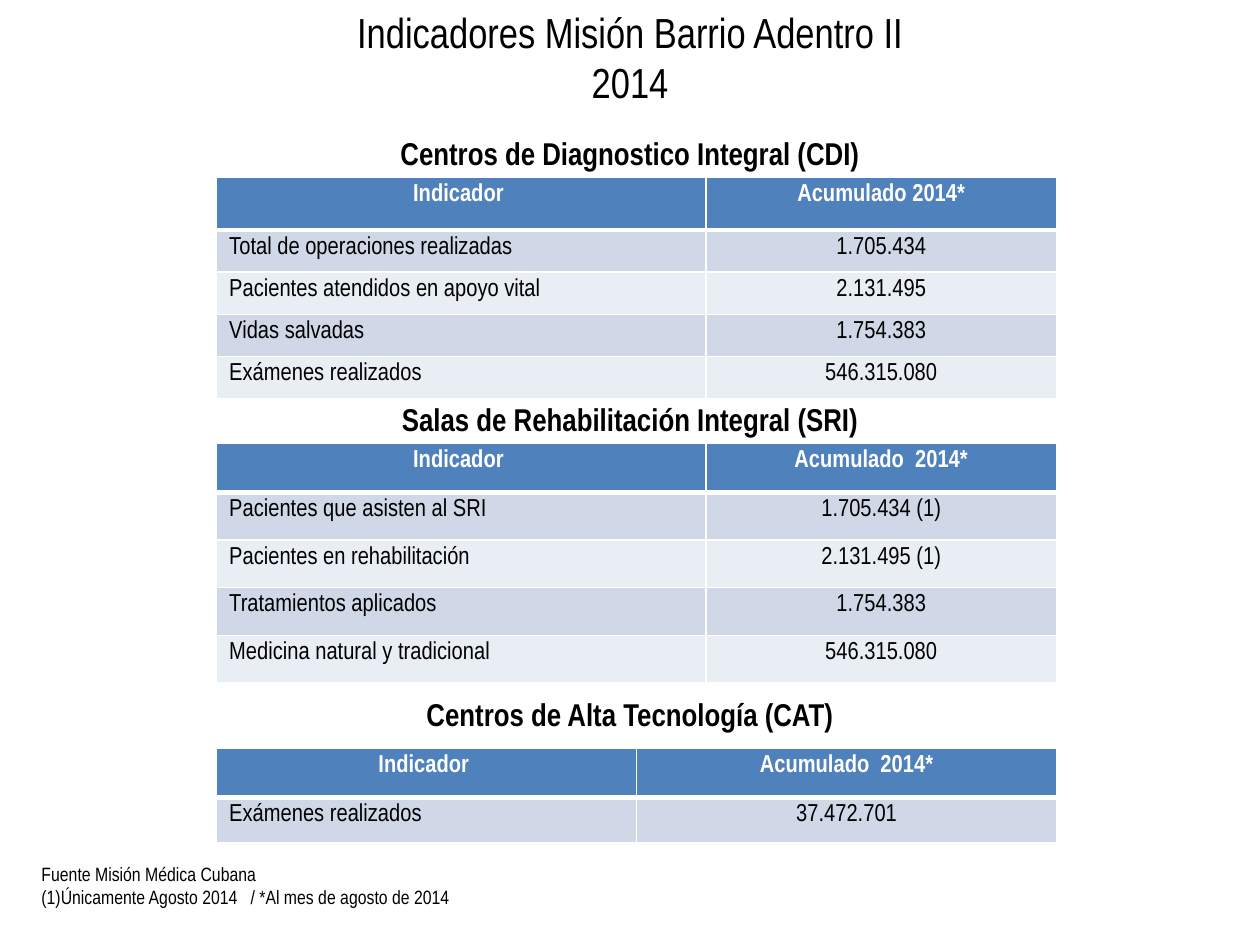
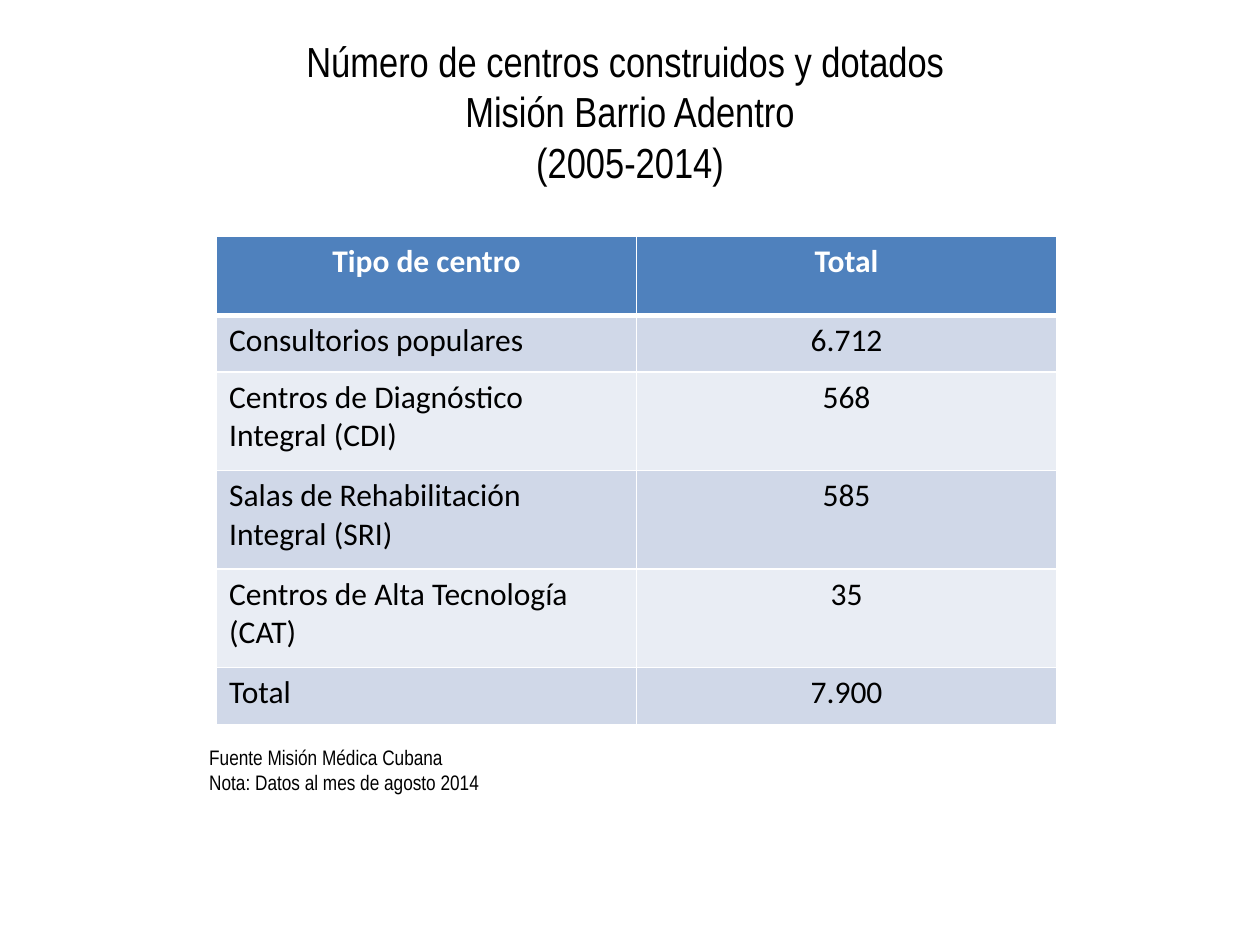
from lxml import etree
from pptx import Presentation
from pptx.dml.color import RGBColor
from pptx.enum.text import MSO_ANCHOR, MSO_AUTO_SIZE, PP_ALIGN
from pptx.oxml.ns import qn
from pptx.util import Pt

LEFT, CENTER = PP_ALIGN.LEFT, PP_ALIGN.CENTER
TOP = MSO_ANCHOR.TOP
GROW = MSO_AUTO_SIZE.SHAPE_TO_FIT_TEXT

COLORS = {
    "text": "000000",
    "head": "4F81BD",
    "headtext": "FFFFFF",
    "odd": "D0D8E8",
    "even": "E9EDF4",
    "line": "FFFFFF",
}
NARROW, ROUND = "Arial Narrow", "Calibri"
TITLE_ONLY = 5
GRID_LEFT = 123.8
WIDE, EQUAL = (279.6, 200.4), (240, 240)
HANG = 18
THIN, THICK = 1, 3


def rgb(name):
    return RGBColor.from_string(COLORS[name])


def style(par, size, align=LEFT, bold=False, color="text", face=NARROW):
    par.alignment = align
    font = par.font
    font.name, font.size, font.bold = face, Pt(size), bold
    font.color.rgb = rgb(color)


def place(shape, left, top, width, height):
    shape.left, shape.top = Pt(left), Pt(top)
    shape.width, shape.height = Pt(width), Pt(height)


def write(frame, lines, size, **look):
    """Fill a text frame with one styled paragraph per line."""
    frame.word_wrap = True
    frame.vertical_anchor = TOP
    frame.auto_size = GROW
    frame.text = "\n".join(lines)
    for par in frame.paragraphs:
        style(par, size, **look)


def add_title(slide, top, height, lines):
    title = slide.shapes.title
    place(title, 107, top, 506, height)
    write(title.text_frame, lines, 24, align=CENTER)


def add_text(slide, box, lines, size, **look):
    shape = slide.shapes.add_textbox(*map(Pt, box))
    write(shape.text_frame, lines, size, **look)
    return shape


def add_heading(slide, top, text):
    add_text(slide, (163.3, top, 393.5, 29), [text], 18, align=CENTER, bold=True)


def add_note(slide, box, lines, size):
    """Add source lines with a hanging indent."""
    note = add_text(slide, box, lines, size)
    for par in note.text_frame.paragraphs:
        props = par._p.get_or_add_pPr()
        props.set("marL", str(Pt(HANG)))
        props.set("indent", str(Pt(-HANG)))


def add_lines(cell, top, base):
    """Draw the cell's borders; top and base are the level line widths."""
    props = cell._tc.get_or_add_tcPr()
    sides = {"lnL": THIN, "lnR": THIN, "lnT": top, "lnB": base}
    for pos, (side, width) in enumerate(sides.items()):
        line = etree.Element(qn(f"a:{side}"), w=str(Pt(width)))
        fill = etree.SubElement(line, qn("a:solidFill"))
        etree.SubElement(fill, qn("a:srgbClr"), val=COLORS["line"])
        props.insert(pos, line)


def add_grid(slide, top, widths, heights, rows, size=14, face=NARROW):
    """Add a two-column table: a header row, then banded label and value rows."""
    frame = slide.shapes.add_table(
        len(rows), len(widths), Pt(GRID_LEFT), Pt(top), Pt(sum(widths)), Pt(sum(heights))
    )
    table = frame.table
    for col, width in zip(table.columns, widths):
        col.width = Pt(width)
    for num, (row, height) in enumerate(zip(rows, heights)):
        table.rows[num].height = Pt(height)
        head = num == 0
        band = "head" if head else ("even", "odd")[num % 2]
        for pos, text in enumerate(row):
            cell = table.cell(num, pos)
            cell.fill.solid()
            cell.fill.fore_color.rgb = rgb(band)
            add_lines(cell, THICK if num == 1 else THIN, THICK if head else THIN)
            cell.text = text
            style(
                cell.text_frame.paragraphs[0],
                size,
                align=CENTER if head or pos else LEFT,
                bold=head,
                color="headtext" if head else "text",
                face=face,
            )


def add_results(slide):
    add_title(slide, 0, 65.5, ["Indicadores Misión Barrio Adentro II", "2014"])
    add_heading(slide, 73.2, "Centros de Diagnostico Integral (CDI)")
    add_heading(slide, 225, "Salas de Rehabilitación Integral (SRI)")
    add_heading(slide, 393.6, "Centros de Alta Tecnología (CAT)")
    add_grid(slide, 101.5, WIDE, [30] + [24] * 4, [
        ("Indicador ", "Acumulado 2014*"),
        ("Total de operaciones realizadas", "1.705.434"),
        ("Pacientes atendidos en apoyo vital", "2.131.495"),
        ("Vidas salvadas", "1.754.383"),
        ("Exámenes realizados", "546.315.080"),
    ])
    add_grid(slide, 253.5, WIDE, [28] + [27.2] * 4, [
        ("Indicador ", "Acumulado  2014*"),
        ("Pacientes que asisten al SRI", "1.705.434 (1)"),
        ("Pacientes en rehabilitación", "2.131.495 (1)"),
        ("Tratamientos aplicados", "1.754.383"),
        ("Medicina natural y tradicional", "546.315.080"),
    ])
    add_grid(slide, 427.7, EQUAL, [28, 26], [
        ("Indicador ", "Acumulado  2014*"),
        ("Exámenes realizados", "37.472.701"),
    ])
    add_note(slide, (16.6, 489.3, 624, 34), [
        "Fuente Misión Médica Cubana",
        "(1)Únicamente Agosto 2014   / *Al mes de agosto de 2014",
    ], 11)


def add_centers(slide):
    add_title(slide, 16.6, 94.5, [
        "Número de centros construidos y dotados ",
        "Misión Barrio Adentro",
        "(2005-2014)",
    ])
    add_grid(slide, 135, EQUAL, [45.2, 32.4] + [56.3] * 3 + [32.4], [
        ("Tipo de centro", "Total"),
        ("Consultorios populares", "6.712"),
        ("Centros de Diagnóstico Integral (CDI)", "568"),
        ("Salas de Rehabilitación Integral (SRI)", "585"),
        ("Centros de Alta Tecnología (CAT)", "35"),
        ("Total", "7.900"),
    ], size=18, face=ROUND)
    add_note(slide, (112.5, 422, 343.5, 36), [
        "Fuente Misión Médica Cubana",
        "Nota: Datos al mes de agosto 2014",
    ], 12)


def main():
    deck = Presentation()
    deck.slide_width, deck.slide_height = Pt(720), Pt(540)
    for build in (add_results, add_centers):
        build(deck.slides.add_slide(deck.slide_layouts[TITLE_ONLY]))
    deck.save("out.pptx")


if __name__ == "__main__":
    main()
